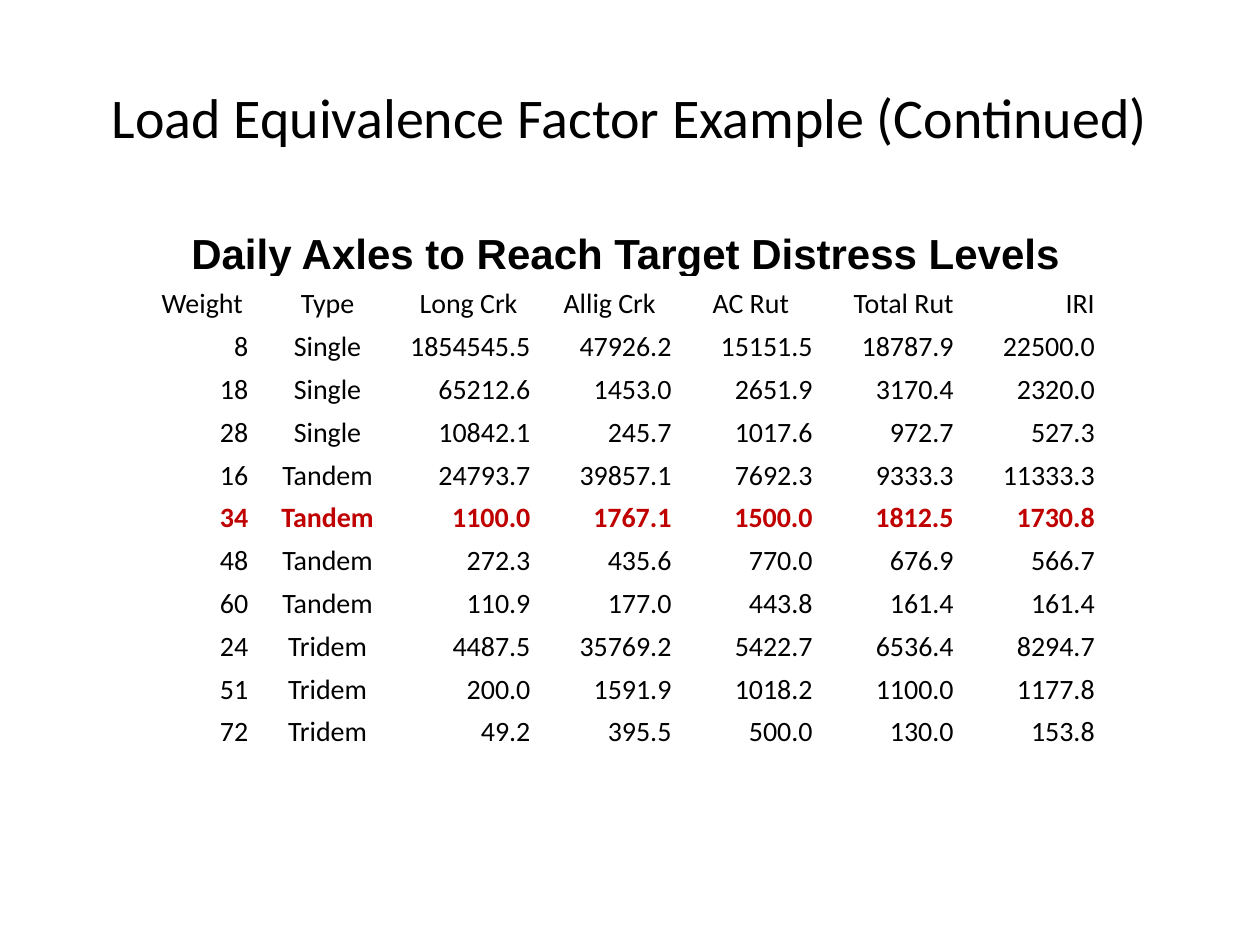
"""Build the slide of daily axle counts that reach the target distress levels."""
from dataclasses import dataclass

from lxml import etree
from pptx import Presentation
from pptx import util as u
from pptx.dml.color import RGBColor
from pptx.enum import text
from pptx.oxml.ns import qn

BLACK = RGBColor(0x00, 0x00, 0x00)
RED = RGBColor(0xC0, 0x00, 0x00)
WHITE = RGBColor(0xFF, 0xFF, 0xFF)

WIDTH, HEIGHT = u.Inches(10), u.Inches(7.5)
ROW_HEIGHT = u.Inches(0.34)
WEIGHT_WIDTH, LEVEL_WIDTH = u.Inches(0.87), u.Inches(1.12)
CENTER, RIGHT = text.PP_ALIGN.CENTER, text.PP_ALIGN.RIGHT


@dataclass(frozen=True)
class Style:
    size: int
    font: str = "Calibri"
    color: RGBColor = BLACK
    bold: bool = False


@dataclass(frozen=True)
class Axle:
    weight: int
    kind: str
    counts: tuple[float, ...]

    def labels(self) -> list[str]:
        return [str(self.weight), self.kind, *(f"{count:.1f}" for count in self.counts)]


HEADING = Style(32)
CAPTION = Style(24, "Arial", bold=True)
PLAIN = Style(16)
TARGET = Style(16, color=RED, bold=True)
TARGET_WEIGHT = 34

HEADERS = ["Weight", "Type", "Long Crk", "Allig Crk", "AC Rut", "Total Rut", "IRI"]
HEADER_ALIGNS = [CENTER] * 5 + [RIGHT] * 2
AXLE_ALIGNS = [RIGHT, CENTER] + [RIGHT] * 5
AXLES = [
    Axle(8, "Single", (1854545.5, 47926.2, 15151.5, 18787.9, 22500.0)),
    Axle(18, "Single", (65212.6, 1453.0, 2651.9, 3170.4, 2320.0)),
    Axle(28, "Single", (10842.1, 245.7, 1017.6, 972.7, 527.3)),
    Axle(16, "Tandem", (24793.7, 39857.1, 7692.3, 9333.3, 11333.3)),
    Axle(34, "Tandem", (1100.0, 1767.1, 1500.0, 1812.5, 1730.8)),
    Axle(48, "Tandem", (272.3, 435.6, 770.0, 676.9, 566.7)),
    Axle(60, "Tandem", (110.9, 177.0, 443.8, 161.4, 161.4)),
    Axle(24, "Tridem", (4487.5, 35769.2, 5422.7, 6536.4, 8294.7)),
    Axle(51, "Tridem", (200.0, 1591.9, 1018.2, 1100.0, 1177.8)),
    Axle(72, "Tridem", (49.2, 395.5, 500.0, 130.0, 153.8)),
]


def write(paragraph, words: str, style: Style, align: text.PP_ALIGN) -> None:
    """Add one styled run to a paragraph."""
    paragraph.alignment = align
    run = paragraph.add_run()
    run.text = words
    run.font.size = u.Pt(style.size)
    run.font.name = style.font
    run.font.bold = style.bold
    run.font.color.rgb = style.color


def set_borders(cell, bottom: float = 1) -> None:
    """Give a cell white borders, with its own width at the bottom."""
    properties = cell._tc.get_or_add_tcPr()
    widths = {"a:lnL": 1, "a:lnR": 1, "a:lnT": 1, "a:lnB": bottom}
    for place, (side, width) in enumerate(widths.items()):
        line = etree.Element(qn(side), w=str(u.Pt(width)))
        fill = etree.SubElement(line, qn("a:solidFill"))
        etree.SubElement(fill, qn("a:srgbClr"), val=str(WHITE))
        properties.insert(place, line)


def fill_cell(cell, words: str, style: Style, align: text.PP_ALIGN, bottom: float = 1) -> None:
    """Write and format one table cell."""
    cell.fill.background()
    cell.vertical_anchor = text.MSO_ANCHOR.BOTTOM
    cell.margin_left = cell.margin_right = u.Inches(0.07)
    cell.margin_top = cell.margin_bottom = 0
    paragraph = cell.text_frame.paragraphs[0]
    paragraph.line_spacing = 1.15
    write(paragraph, words, style, align)
    set_borders(cell, bottom)


def fill_row(table, row: int, labels: list[str], style: Style, aligns: list) -> None:
    """Fill every cell of one table row."""
    for column, (label, align) in enumerate(zip(labels, aligns)):
        fill_cell(table.cell(row, column), label, style, align)


def add_heading(slide) -> None:
    """Add the slide heading."""
    box = slide.shapes.add_textbox(
        int(WIDTH * 0.05), int(HEIGHT * 0.04), int(WIDTH * 0.9), u.Inches(1.25))
    frame = box.text_frame
    frame.word_wrap = True
    frame.vertical_anchor = text.MSO_ANCHOR.MIDDLE
    write(frame.paragraphs[0], "Load Equivalence Factor Example (Continued)", HEADING, CENTER)


def add_axle_table(slide) -> None:
    """Add the table of daily axles."""
    rows, columns = len(AXLES) + 2, len(HEADERS)
    table = slide.shapes.add_table(
        rows, columns, u.Inches(1.17), u.Inches(1.75),
        WEIGHT_WIDTH + LEVEL_WIDTH * (columns - 1), ROW_HEIGHT * rows).table
    table.first_row = table.horz_banding = False
    for index, column in enumerate(table.columns):
        column.width = LEVEL_WIDTH if index else WEIGHT_WIDTH
    for row in table.rows:
        row.height = ROW_HEIGHT

    caption = table.cell(0, 0)
    caption.merge(table.cell(0, columns - 1))
    fill_cell(caption, "Daily Axles to Reach Target Distress Levels", CAPTION, CENTER, bottom=3)
    fill_row(table, 1, HEADERS, PLAIN, HEADER_ALIGNS)
    for index, axle in enumerate(AXLES, start=2):
        style = TARGET if axle.weight == TARGET_WEIGHT else PLAIN
        fill_row(table, index, axle.labels(), style, AXLE_ALIGNS)


def main() -> None:
    """Build and save the presentation."""
    deck = Presentation()
    deck.slide_width, deck.slide_height = WIDTH, HEIGHT
    slide = deck.slides.add_slide(deck.slide_layouts[6])
    add_heading(slide)
    add_axle_table(slide)
    deck.save("out.pptx")


if __name__ == "__main__":
    main()
